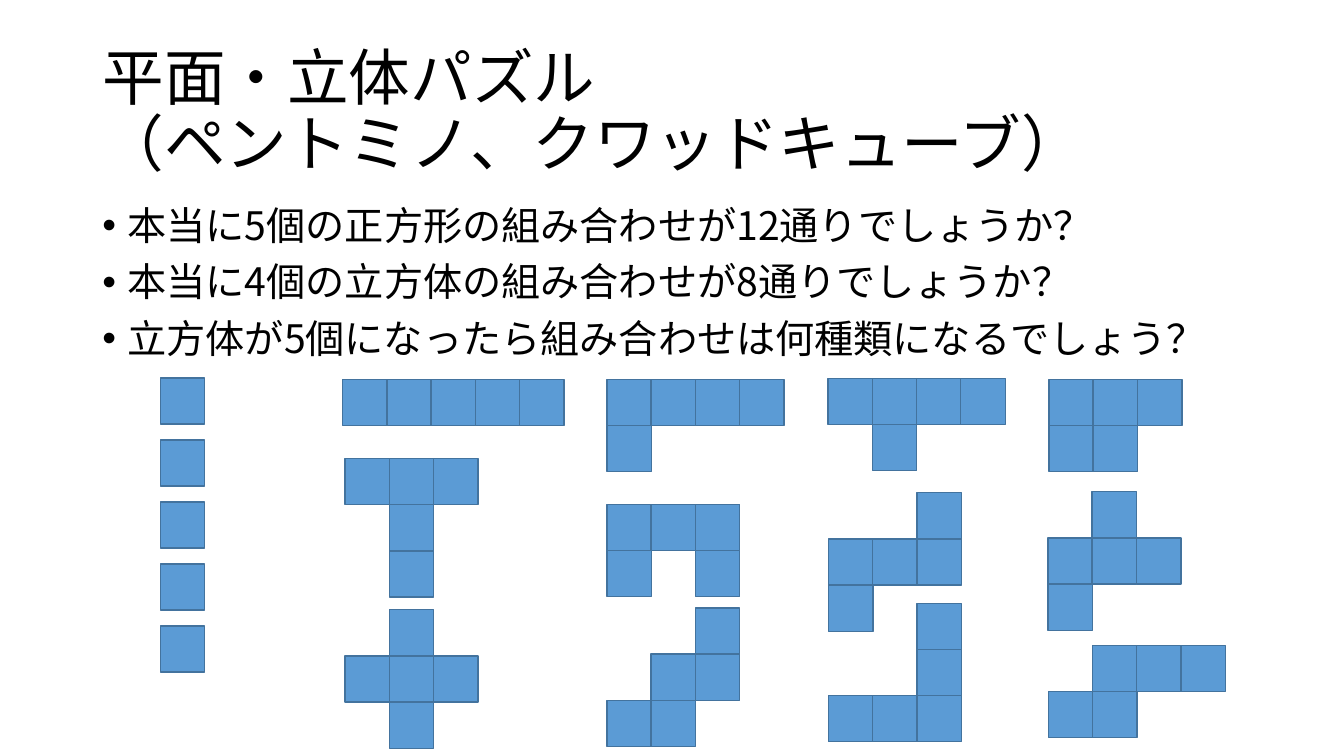
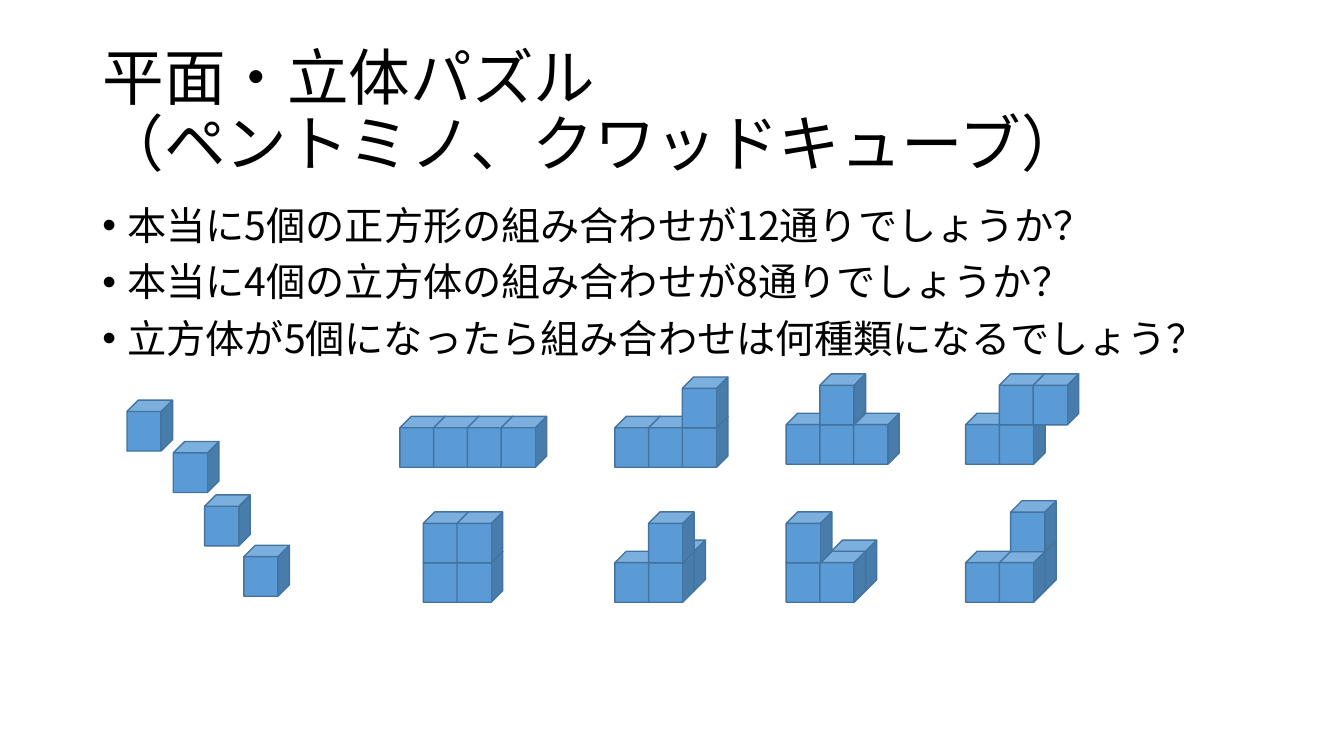
from dataclasses import dataclass

from lxml.etree import SubElement
from pptx import Presentation
from pptx.dml.color import RGBColor
from pptx.enum.shapes import MSO_SHAPE as Shape
from pptx.enum.text import MSO_ANCHOR as Anchor, MSO_AUTO_SIZE as AutoSize, PP_ALIGN as Align
from pptx.oxml.ns import qn
from pptx.util import Pt


@dataclass(frozen=True)
class Theme:
    font: str = "Noto Sans CJK JP"
    bullet_font: str = "Arial"
    ink: RGBColor = RGBColor(0x00, 0x00, 0x00)
    block: RGBColor = RGBColor(0x5B, 0x9B, 0xD5)
    edge: RGBColor = RGBColor(0x43, 0x73, 0x9E)
    title_size: int = 44
    body_size: int = 28
    edge_width: int = 1
    line_spacing: float = 0.9
    space_before: int = 10
    bullet_indent: int = 18


@dataclass(frozen=True)
class Box:
    left: float
    top: float
    width: float
    height: float


THEME = Theme()
SLIDE_SIZE = (960, 540)
TITLE_BOX = Box(66, 28.8, 828, 104.4)
QUESTIONS_BOX = Box(66, 144, 828, 342.7)
SQUARES_BOX = Box(114.5, 270, 768, 264)
CUBES_BOX = Box(90.7, 267, 686, 168)

TITLE = "平面・立体パズル\v（ペントミノ、クワッドキューブ）"
QUESTIONS = [
    "本当に5個の正方形の組み合わせが12通りでしょうか？",
    "本当に4個の立方体の組み合わせが8通りでしょうか？",
    "立方体が5個になったら組み合わせは何種類になるでしょう？",
]

SQUARE = (31.8, 33)
SQUARE_STEP = (31.6, 33)
LOOSE_SQUARES, LOOSE_STEP = 5, 44.3
# Left and top within the region, then the rows of the piece
PENTOMINOES = [
    (130.3, 1, ["XXXXX"]),
    (319, 1, ["XXXX", "X"]),
    (477, 0.3, ["XXXX", ".X"]),
    (634.8, 1, ["XXX", "XX"]),
    (132, 57.5, ["XXX", ".X", ".X"]),
    (319, 90.2, ["XXX", "X.X"]),
    (477.3, 82, ["..X", "XXX", "X"]),
    (634, 81.3, [".X", "XXX", "X"]),
    (132, 165.5, [".X", "XXX", ".X"]),
    (319, 164.3, ["..X", ".XX", "XX"]),
    (477.3, 160.9, ["..X", "..X", "XXX"]),
    (634.3, 191, [".XXX", "XX"]),
]

CUBE = (32.6, 36.4)
CUBE_STEP = (24.1, 28.1)
DEPTH_STEP = 8
LOOSE_CUBES = [(0, 18.8), (33.1, 48.4), (55.5, 86.5), (83.5, 122.5)]
# Left and top of the first cube, then (right, up, back) steps from rear to front
QUAD_CUBES = [
    (195, 30.4, [(0, 0, 0), (1, 0, 0), (2, 0, 0), (3, 0, 0)]),
    (348.5, 30.4, [(0, 0, 0), (1, 0, 0), (2, 0, 0), (2, 1, 0)]),
    (470.9, 28.2, [(0, 0, 0), (1, 0, 0), (2, 0, 0), (1, 1, 0)]),
    (599.1, 28.2, [(0, 0, 0), (1, 0, 0), (1, 1, 0), (2, 1, 0)]),
    (211.7, 126.8, [(0, 0, 0), (1, 0, 0), (0, 1, 0), (1, 1, 0)]),
    (348.5, 126.8, [(1, 0, 1), (0, 0, 0), (1, 0, 0), (1, 1, 0)]),
    (470.9, 126.8, [(1, 0, 1), (0, 0, 0), (1, 0, 0), (0, 1, 0)]),
    (599.1, 126.8, [(1, 0, 1), (0, 0, 0), (1, 0, 0), (1, 1, 1)]),
]


def format_paragraph(paragraph, size):
    paragraph.alignment = Align.LEFT
    paragraph.line_spacing = THEME.line_spacing
    for run in paragraph.runs:
        run.font.size = Pt(size)
        run.font.color.rgb = THEME.ink
        run.font.name = THEME.font
        SubElement(run.font._element, qn("a:ea"), typeface=THEME.font)


def add_bullet(paragraph):
    properties = paragraph._p.get_or_add_pPr()
    properties.set("marL", str(Pt(THEME.bullet_indent)))
    properties.set("indent", str(-Pt(THEME.bullet_indent)))
    SubElement(properties, qn("a:buFont"), typeface=THEME.bullet_font)
    SubElement(properties, qn("a:buChar"), char="•")


def add_title(slide, box):
    title = slide.shapes.title
    title.left, title.top = Pt(box.left), Pt(box.top)
    title.width, title.height = Pt(box.width), Pt(box.height)
    frame = title.text_frame
    frame.auto_size = AutoSize.NONE
    frame.vertical_anchor = Anchor.MIDDLE
    paragraph = frame.paragraphs[0]
    paragraph.text = TITLE
    format_paragraph(paragraph, THEME.title_size)


def add_questions(slide, box):
    questions = slide.shapes.add_textbox(Pt(box.left), Pt(box.top), Pt(box.width), Pt(box.height))
    frame = questions.text_frame
    frame.word_wrap = True
    frame.text = "\n".join(QUESTIONS)
    for paragraph in frame.paragraphs:
        format_paragraph(paragraph, THEME.body_size)
        paragraph.space_before = Pt(THEME.space_before)
        add_bullet(paragraph)


def add_block(slide, kind, left, top, size):
    block = slide.shapes.add_shape(kind, Pt(left), Pt(top), Pt(size[0]), Pt(size[1]))
    block.shadow.inherit = False
    block.fill.solid()
    block.fill.fore_color.rgb = THEME.block
    block.line.color.rgb = THEME.edge
    block.line.width = Pt(THEME.edge_width)


def add_squares(slide, box):
    """Draw the loose squares and the twelve pentominoes."""
    for index in range(LOOSE_SQUARES):
        add_block(slide, Shape.RECTANGLE, box.left, box.top + index * LOOSE_STEP, SQUARE)
    for left, top, rows in PENTOMINOES:
        for row, cells in enumerate(rows):
            for column, cell in enumerate(cells):
                if cell == "X":
                    add_block(slide, Shape.RECTANGLE,
                              box.left + left + column * SQUARE_STEP[0],
                              box.top + top + row * SQUARE_STEP[1], SQUARE)


def add_cubes(slide, box):
    """Draw the loose cubes and the eight four-cube solids."""
    for left, top in LOOSE_CUBES:
        add_block(slide, Shape.CUBE, box.left + left, box.top + top, CUBE)
    for left, top, cubes in QUAD_CUBES:
        for right, up, back in cubes:
            add_block(slide, Shape.CUBE,
                      box.left + left + right * CUBE_STEP[0] + back * DEPTH_STEP,
                      box.top + top - up * CUBE_STEP[1] - back * DEPTH_STEP, CUBE)


def add_puzzle_slide(deck, add_pieces, pieces_box):
    slide = deck.slides.add_slide(deck.slide_layouts.get_by_name("Title Only"))
    add_title(slide, TITLE_BOX)
    add_questions(slide, QUESTIONS_BOX)
    add_pieces(slide, pieces_box)


def main():
    deck = Presentation()
    deck.slide_width, deck.slide_height = (Pt(length) for length in SLIDE_SIZE)
    add_puzzle_slide(deck, add_squares, SQUARES_BOX)
    add_puzzle_slide(deck, add_cubes, CUBES_BOX)
    deck.save("out.pptx")


if __name__ == "__main__":
    main()
